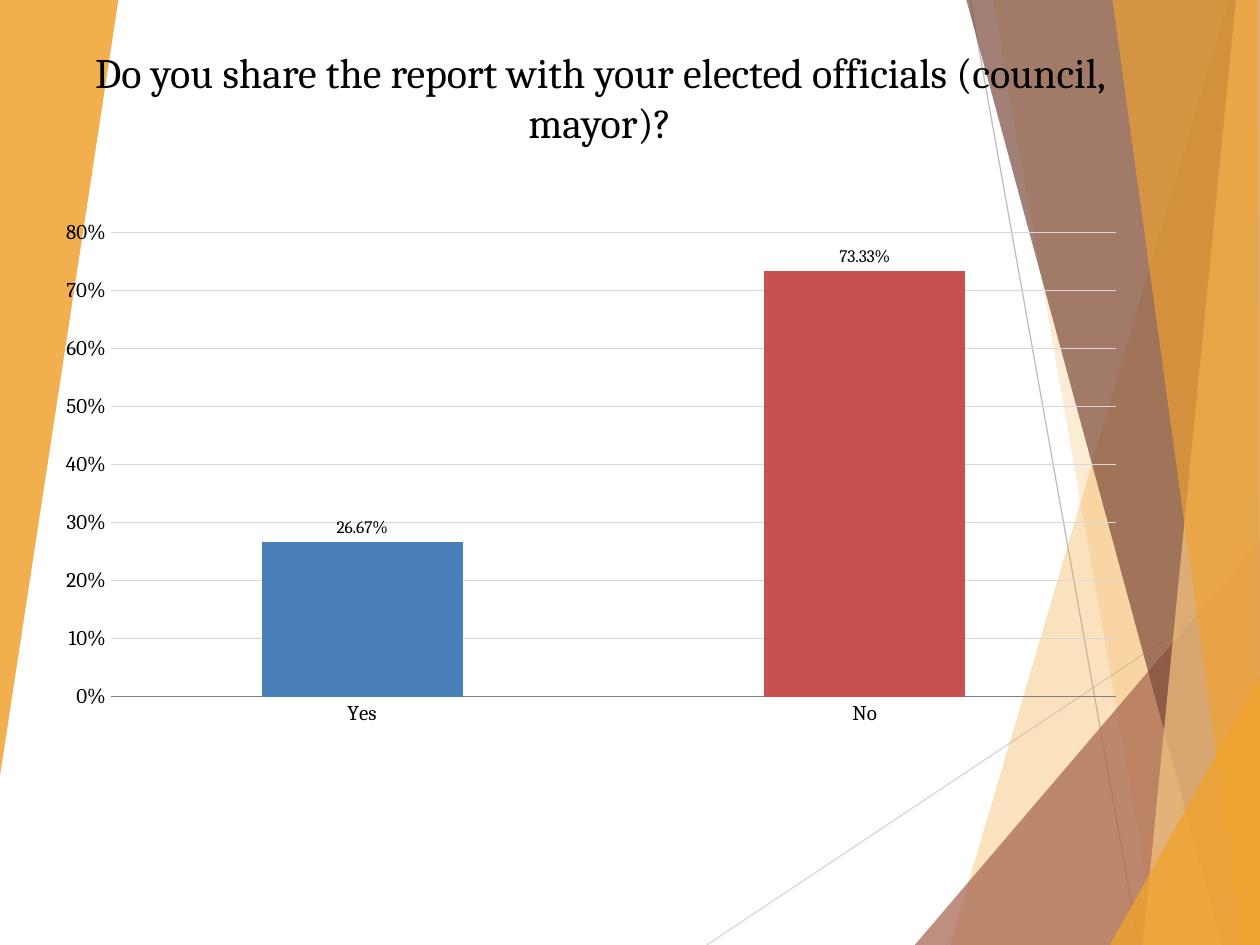
from lxml.etree import SubElement
from pptx import Presentation
from pptx.chart.data import CategoryChartData
from pptx.dml.color import RGBColor
from pptx.enum.chart import XL_CHART_TYPE, XL_LABEL_POSITION, XL_TICK_MARK
from pptx.enum.shapes import MSO_SHAPE
from pptx.enum.text import MSO_ANCHOR, PP_ALIGN
from pptx.oxml.ns import qn
from pptx.util import Inches, Pt

FONT = "Cambria"
COLORS = {
    "gold": "F0A22E", "sand": "F6C782", "rust": "A5644E", "brown": "7C4B3B",
    "pale": "D9D9D9", "gray": "BFBFBF", "grid": "D8D8D8", "axis": "808080",
    "yes": "4980BA", "no": "C6514E", "text": "000000",
}
RAYS = [
    ("pale", (5.61, 7.5), (10.01, 4.57)),
    ("gray", (7.7, 0), (9.04, 7.5)),
]
SHARDS = [
    ("gold", 30, [(9.75, 0), (7.54, 7.5), (10.02, 7.51), (10.01, 0)]),
    ("gold", 20, [(7.88, 0), (9.19, 7.5), (10.01, 7.5), (10.01, 0)]),
    ("rust", 72, [(7.26, 7.5), (10, 4.29), (10.01, 7.5)]),
    ("brown", 70, [(7.67, 0), (9.7, 7.5), (10.01, 7.5), (10.01, 0)]),
    ("sand", 70, [(9.81, 0), (9.07, 7.5), (10.01, 7.5), (10, 0)]),
    ("gold", 65, [(8.83, 0), (9.86, 7.5), (10, 7.5), (9.98, 0)]),
    ("gold", 80, [(8.81, 7.5), (10.01, 5.35), (10.01, 7.5)]),
    ("gold", 85, [(0, 0), (0.94, 0), (0, 6.16)]),
]


def color(name):
    """Return the named colour."""
    return RGBColor.from_string(COLORS[name])


def add_ray(slide, left, top, hue, start, end):
    """Draw one thin line."""
    ends = [Inches(a + b) for point in (start, end)
            for a, b in zip((left, top), point)]
    ray = slide.shapes.add_connector(1, *ends)
    ray.line.color.rgb = color(hue)
    ray.line.width = Pt(0.75)
    SubElement(ray._element.spPr, qn("a:effectLst"))


def add_shard(slide, left, top, hue, alpha, points):
    """Draw one translucent polygon."""
    dots = [(Inches(left + x), Inches(top + y)) for x, y in points]
    pen = slide.shapes.build_freeform(*dots[0])
    pen.add_line_segments(dots[1:], close=True)
    shard = pen.convert_to_shape()
    shard.shadow.inherit = False
    shard.line.fill.background()
    shard.fill.solid()
    shard.fill.fore_color.rgb = color(hue)
    tint = shard._element.spPr.find(qn("a:solidFill"))[0]
    SubElement(tint, qn("a:alpha"), val=str(alpha * 1000))


def add_decor(slide, left, top):
    """Draw the lines and shards around the slide edges."""
    for ray in RAYS:
        add_ray(slide, left, top, *ray)
    for shard in SHARDS:
        add_shard(slide, left, top, *shard)


def add_title(slide, left, top, width, height, text):
    """Place the centred question."""
    box = slide.shapes.add_shape(
        MSO_SHAPE.ROUNDED_RECTANGLE,
        Inches(left), Inches(top), Inches(width), Inches(height))
    box.shadow.inherit = False
    box.fill.background()
    box.line.fill.background()
    frame = box.text_frame
    frame.word_wrap = True
    frame.vertical_anchor = MSO_ANCHOR.MIDDLE
    line = frame.paragraphs[0]
    line.alignment = PP_ALIGN.CENTER
    run = line.add_run()
    run.text = text
    run.font.name = FONT
    run.font.size = Pt(24)
    run.font.color.rgb = color("text")


def set_font(font, size):
    """Style chart text."""
    font.name = FONT
    font.size = Pt(size)
    font.color.rgb = color("text")


def add_bars(slide, left, top, width, height, shares):
    """Place the column chart of answer shares."""
    data = CategoryChartData(number_format="0.00%")
    data.categories = list(shares)
    data.add_series("Series 1", list(shares.values()))
    chart = slide.shapes.add_chart(
        XL_CHART_TYPE.COLUMN_CLUSTERED, Inches(left), Inches(top),
        Inches(width), Inches(height), data).chart
    chart.has_legend = False
    chart.has_title = False
    set_font(chart.font, 18)
    for axis in (chart.category_axis, chart.value_axis):
        axis.major_tick_mark = XL_TICK_MARK.NONE
        axis.minor_tick_mark = XL_TICK_MARK.NONE
        set_font(axis.tick_labels.font, 12)
    base = chart.category_axis.format.line
    base.color.rgb = color("axis")
    base.width = Pt(0.75)
    scale = chart.value_axis
    scale.minimum_scale, scale.maximum_scale, scale.major_unit = 0, 0.8, 0.1
    scale.tick_labels.number_format = "0%"
    scale.tick_labels.number_format_is_linked = False
    scale.format.line.fill.background()
    grid = scale.major_gridlines.format.line
    grid.color.rgb = color("grid")
    grid.width = Pt(0.75)
    plot = chart.plots[0]
    plot.gap_width = 150
    plot.vary_by_categories = False
    bars = plot.series[0]
    for index, answer in enumerate(shares):
        fill = bars.points[index].format.fill
        fill.solid()
        fill.fore_color.rgb = color(answer.lower())
    labels = bars.data_labels
    labels.show_value = True
    labels.number_format = "0.00%"
    labels.number_format_is_linked = False
    labels.position = XL_LABEL_POSITION.OUTSIDE_END
    set_font(labels.font, 10)


def main():
    """Build and save the slide."""
    deck = Presentation()
    deck.slide_width, deck.slide_height = Inches(10), Inches(7.5)
    slide = deck.slides.add_slide(deck.slide_layouts[6])
    add_decor(slide, 0, 0)
    add_title(slide, 0.42, 0.07, 8.68, 1.39,
              "Do you share the report with your elected officials "
              "(council, mayor)?")
    add_bars(slide, 0.35, 1.67, 8.68, 4.17, {"Yes": 0.2667, "No": 0.7333})
    deck.save("out.pptx")


if __name__ == "__main__":
    main()
